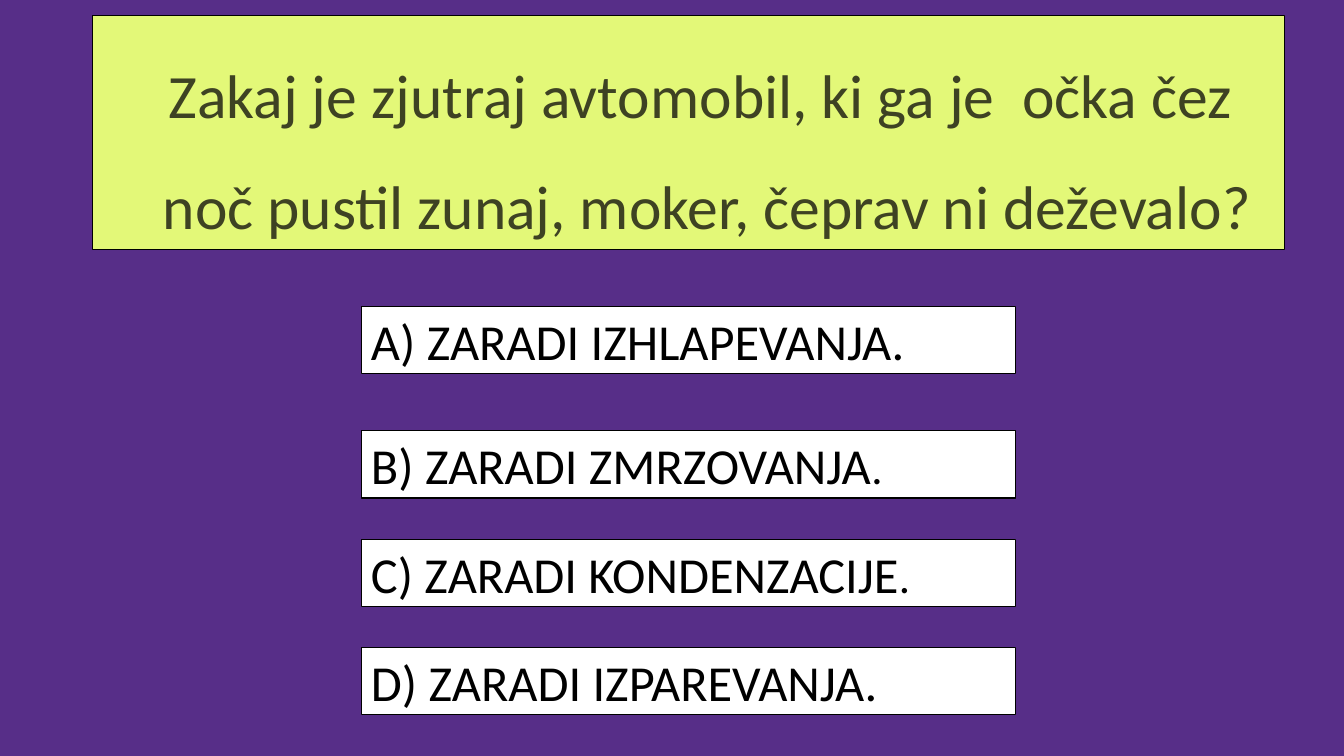
import pptx
import pptx.util
import pptx.dml.color
import pptx.enum.shapes
import pptx.enum.text
import pptx.oxml.ns
import lxml.etree

Cm = pptx.util.Cm
Pt = pptx.util.Pt
ALIGN = pptx.enum.text.PP_ALIGN
ANCHOR = pptx.enum.text.MSO_ANCHOR

FONT = "Calibri"
COLORS = {
    "back": "572E88",
    "lime": "E3F878",
    "olive": "3E4223",
    "white": "FFFFFF",
    "black": "000000",
}
QUESTION = "Zakaj je zjutraj avtomobil, ki ga je  očka čez noč pustil zunaj, moker, čeprav ni deževalo?"
ANSWERS = [
    (7.72, [("A) ZARADI IZHLAPEVANJA.", 36)]),
    (10.85, [("B) ZARADI ZMRZOVANJA", 36), (".", 32)]),
    (13.59, [("C) ZARADI KONDENZACIJE", 36), (".", 32)]),
    (16.31, [("D) ZARADI IZPAREVANJA.", 36)]),
]
LEFT, WIDTH, HEIGHT = 9.1, 16.5, 1.7


def color(name):
    return pptx.dml.color.RGBColor.from_string(COLORS[name])


def paint(shape, fill):
    shape.fill.solid()
    shape.fill.fore_color.rgb = color(fill)
    shape.line.color.rgb = color("black")
    shape.line.width = Pt(0.75)


def style(run, size, ink):
    run.font.name = FONT
    run.font.size = Pt(size)
    run.font.color.rgb = color(ink)


def ask(slide):
    body = slide.placeholders[1]
    body.left, body.top = Cm(2.33), Cm(0.38)
    body.width, body.height = Cm(30.05), Cm(5.92)
    paint(body, "lime")
    frame = body.text_frame
    frame.text = QUESTION
    frame.auto_size = pptx.enum.text.MSO_AUTO_SIZE.NONE
    frame.vertical_anchor = ANCHOR.TOP
    para = frame.paragraphs[0]
    props = para._p.get_or_add_pPr()
    props.set("marL", str(Cm(0.95)))
    props.set("indent", str(Cm(-0.33)))
    lxml.etree.SubElement(props, pptx.oxml.ns.qn("a:buNone"))
    para.alignment = ALIGN.CENTER
    para.line_spacing = 1.5
    para.space_before = Pt(0)
    style(para.runs[0], 44, "olive")


def answer(slide, top, parts):
    button = slide.shapes.add_shape(
        pptx.enum.shapes.MSO_SHAPE.ACTION_BUTTON_CUSTOM,
        Cm(LEFT), Cm(top), Cm(WIDTH), Cm(HEIGHT))
    button.shadow.inherit = False
    paint(button, "white")
    frame = button.text_frame
    frame.word_wrap = True
    frame.vertical_anchor = ANCHOR.MIDDLE
    para = frame.paragraphs[0]
    para.alignment = ALIGN.LEFT
    for text, size in parts:
        run = para.add_run()
        run.text = text
        style(run, size, "black")


def main():
    deck = pptx.Presentation()
    deck.slide_width, deck.slide_height = Cm(33.87), Cm(19.05)
    slide = deck.slides.add_slide(deck.slide_layouts[1])
    slide.background.fill.solid()
    slide.background.fill.fore_color.rgb = color("back")
    title = slide.shapes.title.element
    title.getparent().remove(title)
    ask(slide)
    for top, parts in ANSWERS:
        answer(slide, top, parts)
    deck.save("out.pptx")


if __name__ == "__main__":
    main()
